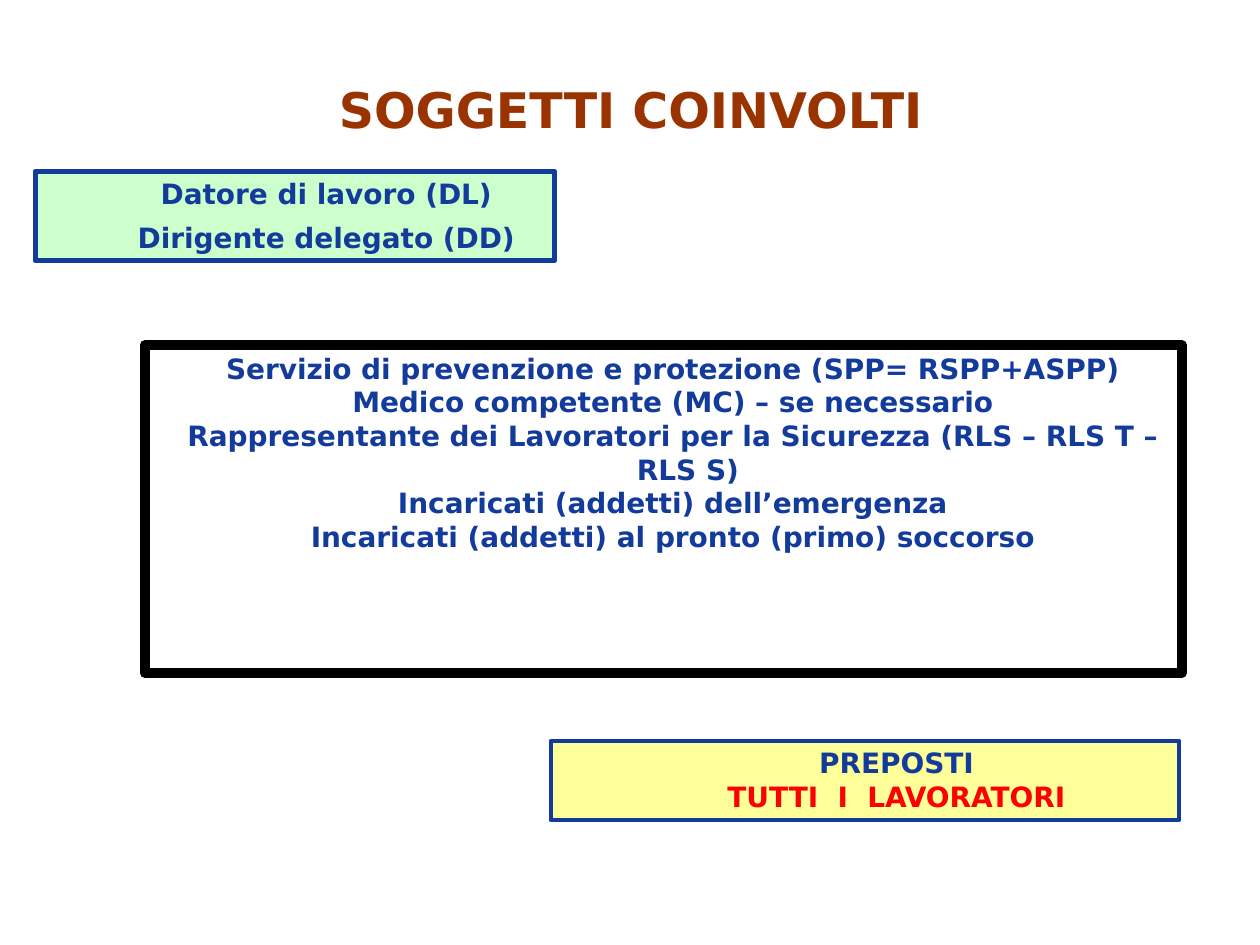
import pptx
from pptx.dml.color import RGBColor
from pptx.enum.shapes import MSO_SHAPE
from pptx.enum.text import MSO_ANCHOR, PP_ALIGN
from pptx.util import Inches, Pt

FONT = "DejaVu Sans"
BLUE, RED, BROWN, BLACK = "133B9C", "FF0000", "993300", "000000"

TITLE = "SOGGETTI COINVOLTI"
TITLE_AT = (1.89, 0.35, 6.28, 0.8)
TITLE_INSETS = (0.05, 0.05, 0.1, 0.05)

BOXES = [
    dict(at=(0.28, 1.36, 4.12, 0.71), fill="CCFFCC", line=(BLUE, 3),
         insets=(0.09, 0.04, 0.09, 0.04), indent=(0.5, 0), gap=6,
         lines=[("Datore di lavoro (DL)", BLUE),
                ("Dirigente delegato (DD)", BLUE)]),
    dict(at=(1.15, 2.74, 8.23, 2.6), fill=None, line=(BLACK, 6),
         insets=TITLE_INSETS, indent=(0.44, -0.24), gap=0,
         lines=[("Servizio di prevenzione e protezione (SPP= RSPP+ASPP)", BLUE),
                ("Medico competente (MC) – se necessario", BLUE),
                ("Rappresentante dei Lavoratori per la Sicurezza "
                 "(RLS – RLS T – RLS S)", BLUE),
                ("Incaricati (addetti) dell’emergenza", BLUE),
                ("Incaricati (addetti) al pronto (primo) soccorso", BLUE)]),
    dict(at=(4.37, 5.88, 4.99, 0.63), fill="FFFF99", line=(BLUE, 2.25),
         insets=(0.09, 0.04, 0.09, 0.04), indent=(0.5, 0), gap=0,
         lines=[("PREPOSTI", BLUE),
                ("TUTTI  I  LAVORATORI", RED)]),
]


def rgb(color):
    return RGBColor.from_string(color)


def set_frame(tf, insets, anchor):
    tf.word_wrap = True
    tf.vertical_anchor = anchor
    (tf.margin_left, tf.margin_top,
     tf.margin_right, tf.margin_bottom) = map(Inches, insets)


def set_paragraph(p, text, size, color, indent):
    p.text = text
    p.alignment = PP_ALIGN.CENTER
    pPr = p._p.get_or_add_pPr()
    for name, value in zip(("marL", "indent"), indent):
        pPr.set(name, str(Inches(value)))
    p.font.name = FONT
    p.font.size = Pt(size)
    p.font.bold = True
    p.font.color.rgb = rgb(color)


def add_box(s, at, fill, line, insets, indent, gap, lines):
    sp = s.shapes.add_shape(MSO_SHAPE.RECTANGLE, *map(Inches, at))
    sp.shadow.inherit = False
    if fill:
        sp.fill.solid()
        sp.fill.fore_color.rgb = rgb(fill)
    else:
        sp.fill.background()
    color, width = line
    sp.line.color.rgb = rgb(color)
    sp.line.width = Pt(width)

    tf = sp.text_frame
    set_frame(tf, insets, MSO_ANCHOR.TOP)
    for i, (text, text_color) in enumerate(lines):
        p = tf.add_paragraph() if i else tf.paragraphs[0]
        set_paragraph(p, text, 16, text_color, indent)
        p.space_before = Pt(gap if i else 0)


prs = pptx.Presentation()
prs.slide_width, prs.slide_height = Inches(10), Inches(7.5)
s = prs.slides.add_slide(prs.slide_layouts[5])

title = s.shapes.title
title.left, title.top, title.width, title.height = map(Inches, TITLE_AT)
set_frame(title.text_frame, TITLE_INSETS, MSO_ANCHOR.BOTTOM)
set_paragraph(title.text_frame.paragraphs[0], TITLE, 28, BROWN, (0.04, -0.04))

for box in BOXES:
    add_box(s, **box)

prs.save("out.pptx")
